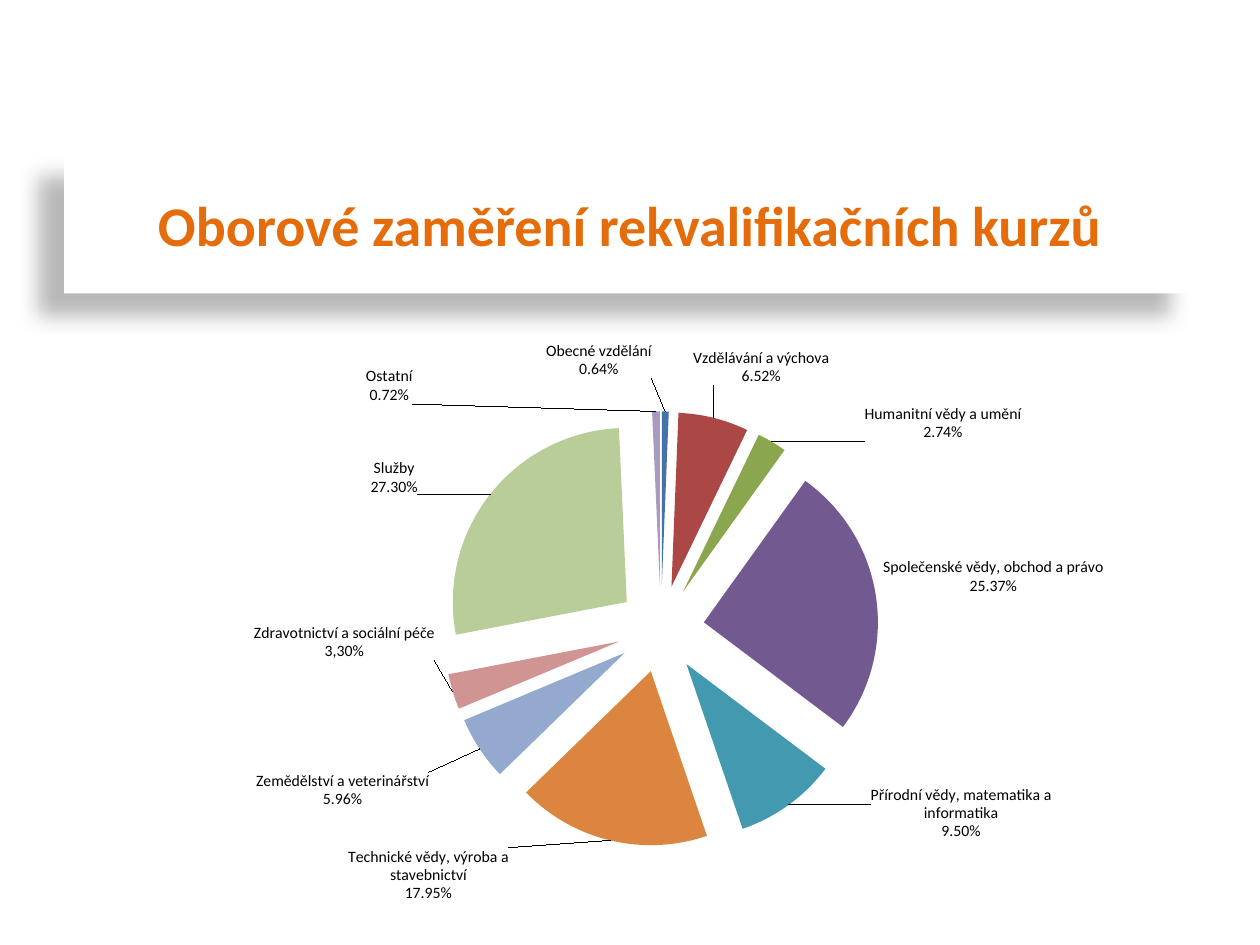
from pptx import Presentation
from pptx.chart.data import CategoryChartData
from pptx.dml.color import RGBColor
from pptx.enum.chart import XL_CHART_TYPE
from pptx.enum.shapes import MSO_SHAPE
from pptx.enum.text import MSO_ANCHOR, PP_ALIGN
from pptx.oxml import parse_xml
from pptx.oxml.ns import nsdecls
from pptx.util import Inches, Pt

TITLE = "Oborové zaměření rekvalifikačních kurzů"
FIELDS = [
    ("Obecné vzdělání", 0.64, "4672A8", (-0.06, -0.04)),
    ("Vzdělávání a výchova", 6.52, "AB4744", (-0.02, -0.04)),
    ("Humanitní vědy a umění", 2.74, "8AA64F", (0.08, 0.01)),
    ("Společenské vědy, obchod a právo", 25.37, "725990", None),
    ("Přírodní vědy, matematika a informatika", 9.5, "4299B0", (0.07, -0.04)),
    ("Technické vědy, výroba a stavebnictví", 17.95, "DC853E", (-0.09, 0)),
    ("Zemědělství a veterinářství", 5.96, "93A9CE", (-0.04, 0.03)),
    ("Zdravotnictví a sociální péče", 3.3, "D09493", (-0.01, -0.11)),
    ("Služby", 27.3, "B8CD97", (-0.06, 0.01)),
    ("Ostatní", 0.72, "A99BBD", (-0.24, 0)),
]
CUSTOM = {7: ["Zdravotnictví a sociální péče", "3,30%"]}
PLOT = {"x": 0.175, "y": 0.16, "w": 0.724, "h": 0.685}
SHOW = (
    '<c:dLblPos val="outEnd"/><c:showLegendKey val="0"/><c:showVal val="0"/>'
    '<c:showCatName val="1"/><c:showSerName val="0"/><c:showPercent val="1"/>'
    '<c:showBubbleSize val="0"/><c:separator>\n</c:separator>'
)
FORMAT = '<c:numFmt formatCode="0.00%" sourceLinked="0"/><c:spPr><a:noFill/><a:ln><a:noFill/></a:ln></c:spPr>'
FONT = '<a:defRPr sz="900"><a:solidFill><a:srgbClr val="000000"/></a:solidFill><a:latin typeface="Calibri"/></a:defRPr>'
STYLE = f'<c:txPr><a:bodyPr/><a:p><a:pPr>{FONT}</a:pPr><a:endParaRPr lang="cs-CZ"/></a:p></c:txPr>'


def color(code):
    return RGBColor.from_string(code)


def layout(parts):
    body = "".join(f'<c:{key} val="{val}"/>' for key, val in parts)
    return f"<c:layout><c:manualLayout>{body}</c:manualLayout></c:layout>"


def label(num, shift):
    place = layout(zip("xy", shift)) if shift else ""
    lines = "".join(
        f'<a:p><a:pPr>{FONT}</a:pPr><a:r><a:rPr lang="cs-CZ" sz="900"/><a:t>{line}</a:t></a:r></a:p>'
        for line in CUSTOM.get(num, [])
    )
    text = f"<c:tx><c:rich><a:bodyPr/>{lines}</c:rich></c:tx>" if lines else ""
    return f'<c:dLbl><c:idx val="{num}"/>{place}{text}{FORMAT}{STYLE}{SHOW}</c:dLbl>'


def add_title(slide):
    box = slide.shapes.add_shape(
        MSO_SHAPE.RECTANGLE, Inches(0.51), Inches(1.23), Inches(8.98), Inches(1.1)
    )
    box.fill.solid()
    box.fill.fore_color.rgb = color("FFFFFF")
    box.line.fill.background()
    box.shadow.inherit = False
    props = box.element.spPr
    props.remove(props[-1])
    props.append(parse_xml(
        f'<a:effectLst {nsdecls("a")}><a:outerShdw blurRad="{Pt(11.8)}" dist="{Pt(19.7)}" '
        f'dir="{141 * 60000}" algn="tl" rotWithShape="0"><a:srgbClr val="000000">'
        '<a:alpha val="28000"/></a:srgbClr></a:outerShdw></a:effectLst>'
    ))
    frame = box.text_frame
    frame.word_wrap = True
    frame.vertical_anchor = MSO_ANCHOR.MIDDLE
    para = frame.paragraphs[0]
    para.alignment = PP_ALIGN.CENTER
    run = para.add_run()
    run.text = TITLE
    font = run.font
    font.name, font.size, font.bold = "Calibri", Pt(32), True
    font.color.rgb = color("E46C0A")
    run._r.get_or_add_rPr().insert(0, parse_xml(
        f'<a:ln {nsdecls("a")} w="{Pt(1)}"><a:solidFill><a:srgbClr val="984807"/></a:solidFill></a:ln>'
    ))


def add_pie(slide):
    data = CategoryChartData()
    data.categories = [name for name, *_ in FIELDS]
    data.add_series("Series 1", [val for _, val, *_ in FIELDS])
    chart = slide.shapes.add_chart(
        XL_CHART_TYPE.PIE, Inches(0.51), Inches(2.46), Inches(8.82), Inches(5.04), data
    ).chart
    chart.has_title = False
    chart.has_legend = False
    chart.font.name, chart.font.size = "Calibri", Pt(10)
    chart.font.color.rgb = color("000000")
    plot = chart.plots[0]
    plot.vary_by_categories = True
    series = plot.series[0]
    for num, (_, _, code, _) in enumerate(FIELDS):
        look = series.points[num].format
        look.fill.solid()
        look.fill.fore_color.rgb = color(code)
        look.line.fill.background()

    node = series._element
    points = node.xpath("c:dPt")
    points[0].addprevious(parse_xml(f'<c:explosion {nsdecls("c")} val="25"/>'))
    labels = "".join(label(num, field[3]) for num, field in enumerate(FIELDS))
    points[-1].addnext(parse_xml(
        f'<c:dLbls {nsdecls("c", "a")}>{labels}{FORMAT}{STYLE}{SHOW}'
        '<c:showLeaderLines val="1"/></c:dLbls>'
    ))
    area = node.xpath("ancestor::c:plotArea")[0]
    for old in area.xpath("c:layout"):
        area.remove(old)
    parts = [("layoutTarget", "inner"), ("xMode", "edge"), ("yMode", "edge"), *PLOT.items()]
    area.insert(0, parse_xml(layout(parts).replace("<c:layout>", f'<c:layout {nsdecls("c")}>', 1)))


def main():
    deck = Presentation()
    deck.slide_width, deck.slide_height = Inches(10), Inches(7.5)
    slide = deck.slides.add_slide(deck.slide_layouts[6])
    add_title(slide)
    add_pie(slide)
    deck.save("out.pptx")


if __name__ == "__main__":
    main()
